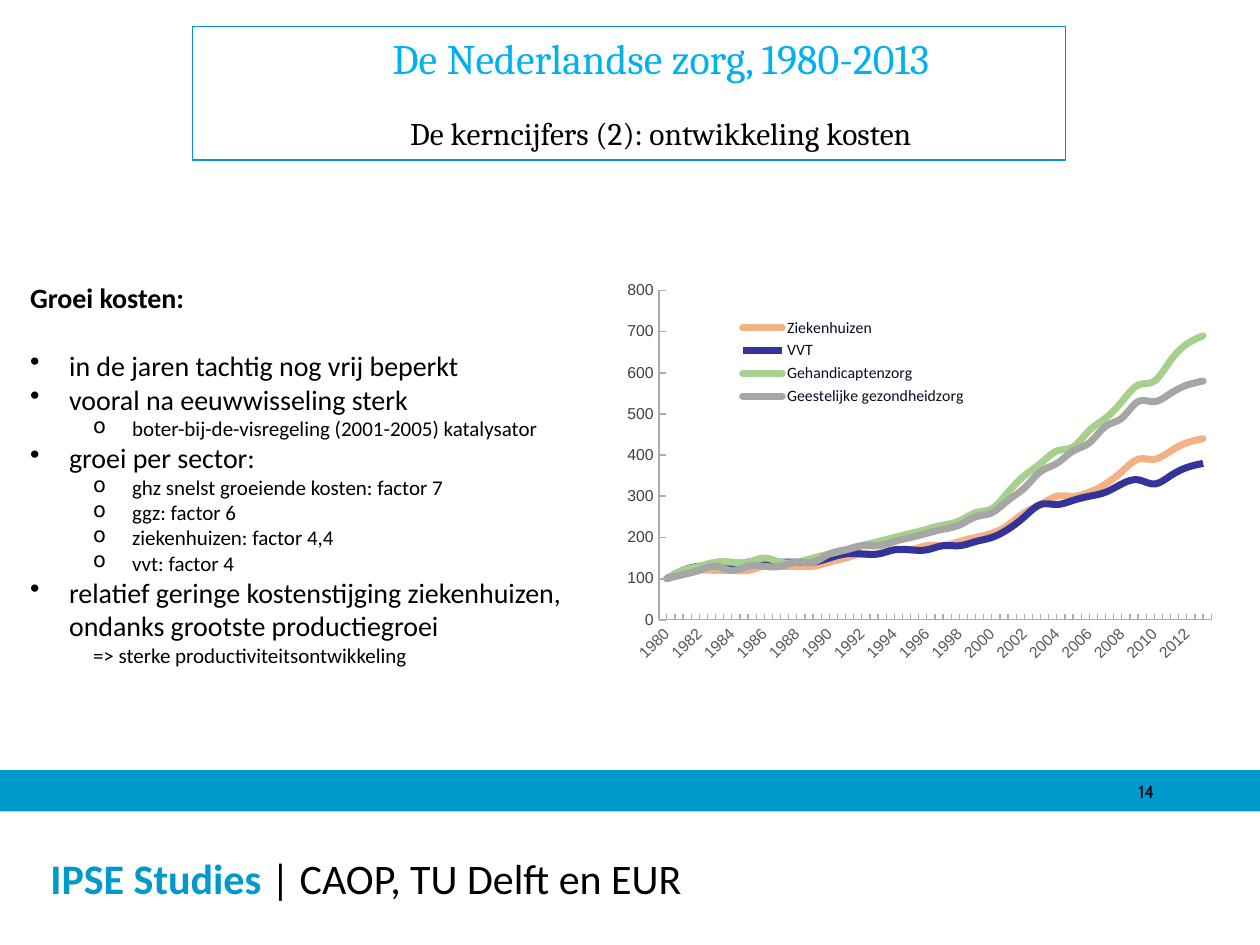
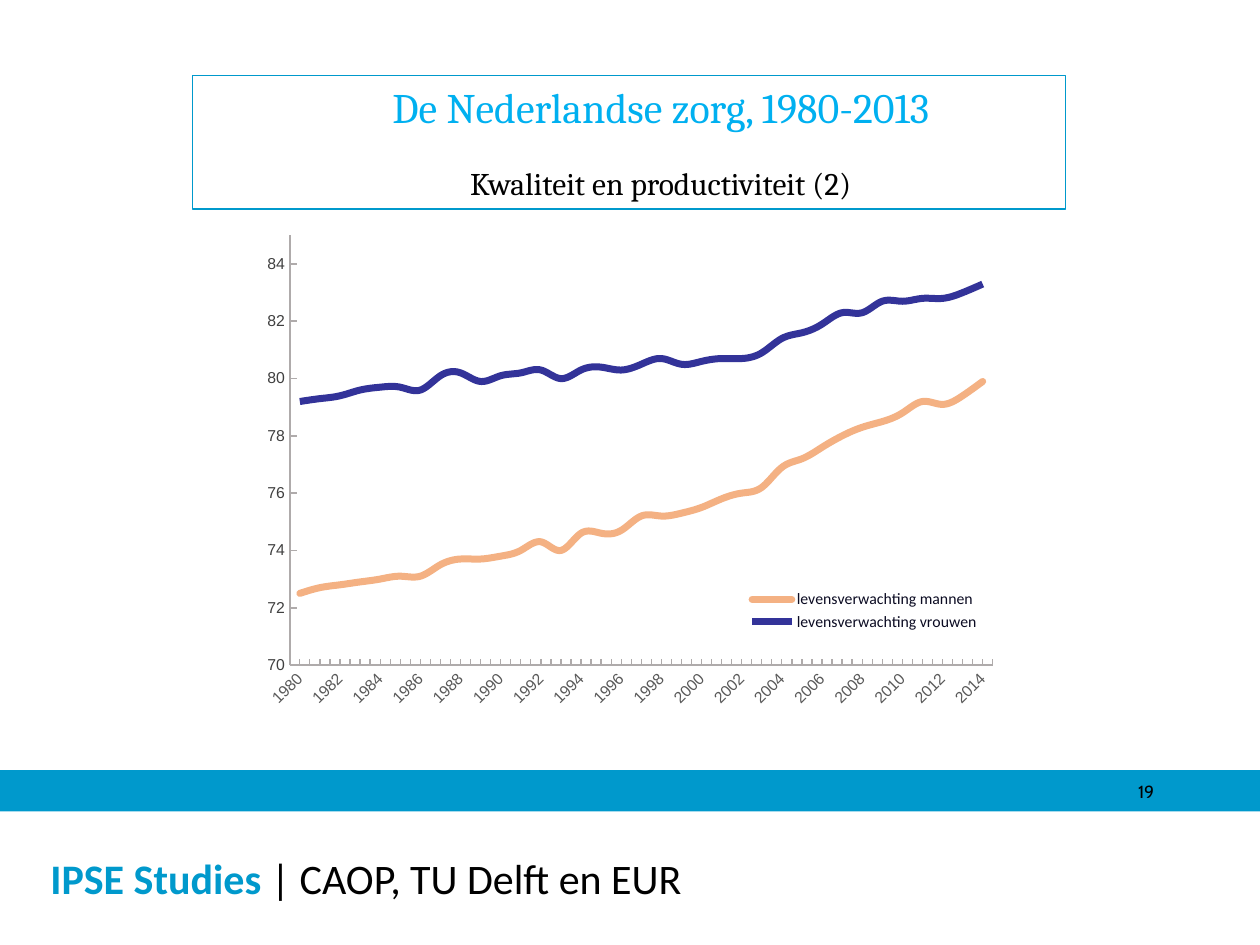
import dataclasses

import pptx
import pptx.chart.data
import pptx.dml.color
import pptx.enum.chart
import pptx.enum.shapes
import pptx.enum.text
import pptx.oxml
import pptx.oxml.ns
import pptx.util

Inches = pptx.util.Inches
Pt = pptx.util.Pt
RGB = pptx.dml.color.RGBColor.from_string
ALIGN = pptx.enum.text.PP_ALIGN
ANCHOR = pptx.enum.text.MSO_ANCHOR
TICK = pptx.enum.chart.XL_TICK_MARK


@dataclasses.dataclass(frozen=True)
class Theme:
    white: str = "FFFFFF"
    black: str = "000000"
    band: str = "0099CC"
    title: str = "00B0F0"
    axis_line: str = "AFABAB"
    year_label: str = "595959"
    value_label: str = "404040"
    legend: str = "0B0B22"
    series: tuple = ("F4B183", "333399", "A8D08D", "A6A6A6")
    heading_font: str = "Cambria"
    body_font: str = "Calibri"
    number_font: str = "Cabin"
    axis_font: str = "Arial"
    title_size: int = 24
    subtitle_size: int = 18
    body_size: int = 16
    detail_size: int = 12
    number_size: int = 10
    label_size: int = 9
    line_width: float = 0.75
    series_width: int = 4


def assign(obj, values):
    for name, value in values.items():
        setattr(obj, name, value)


def set_font(font, name, size, color, bold=False):
    assign(font, {"name": name, "size": Pt(size), "bold": bold})
    font.color.rgb = RGB(color)


def chart_element(tag, children=""):
    return pptx.oxml.parse_xml(
        f'<c:{tag} {pptx.oxml.ns.nsdecls("c")}>{children}</c:{tag}>')


def manual_layout(box, inner=False):
    target = '<c:layoutTarget val="inner"/>' if inner else ""
    modes = '<c:xMode val="edge"/><c:yMode val="edge"/>'
    sides = "".join(f'<c:{side} val="{value}"/>' for side, value in zip("xywh", box))
    return chart_element("layout", f"<c:manualLayout>{target}{modes}{sides}</c:manualLayout>")


class Deck:
    def __init__(self, prs, theme):
        self.prs = prs
        self.theme = theme
        self.slide = None

    def start_slide(self, number, title_top, subtitle):
        self.slide = self.prs.slides.add_slide(self.prs.slide_layouts[6])
        self.footer(number)
        self.title(title_top, subtitle)

    def rect(self, box, fill=None, line=None):
        kind = pptx.enum.shapes.MSO_SHAPE.RECTANGLE
        sp = self.slide.shapes.add_shape(kind, *map(Inches, box))
        sp.shadow.inherit = False
        for part, color in ((sp.fill, fill), (sp.line.fill, line)):
            if color:
                part.solid()
                part.fore_color.rgb = RGB(color)
            else:
                part.background()
        if line:
            sp.line.width = Pt(self.theme.line_width)
        return sp

    def text_box(self, box):
        tf = self.slide.shapes.add_textbox(*map(Inches, box)).text_frame
        tf.word_wrap = True
        return tf

    def paragraph(self, tf, runs, first=False, left=0, hanging=0, bullet=None, **fmt):
        p = tf.paragraphs[0] if first else tf.add_paragraph()
        pPr = p._p.get_or_add_pPr()
        pPr.set("marL", str(Inches(left)))
        pPr.set("indent", str(-Inches(hanging)))
        if bullet:
            pPr.append(pptx.oxml.parse_xml(
                f'<a:buChar {pptx.oxml.ns.nsdecls("a")} char="{bullet}"/>'))
        assign(p, {"alignment": ALIGN.LEFT, **fmt})
        for text, *style in runs:
            r = p.add_run()
            r.text = text
            set_font(r.font, *style)

    def footer(self, number):
        t = self.theme
        self.rect((0, 6.12, 10, 0.32), t.band, t.band)
        tf = self.rect((0, 6.44, 10, 1.06), t.white).text_frame
        assign(tf, {"margin_left": Inches(0.4), "vertical_anchor": ANCHOR.MIDDLE})
        self.paragraph(tf, [
            ("IPSE Studies ", t.body_font, t.title_size, t.band, True),
            ("| CAOP, TU Delft en EUR", t.body_font, t.title_size, t.black),
        ], first=True)
        tf = self.text_box((7.08, 6.15, 2.08, 0.25))
        assign(tf, {"margin_left": 0, "margin_right": 0})
        self.paragraph(tf, [(str(number), t.number_font, t.number_size, t.black)],
                       first=True, alignment=ALIGN.RIGHT)

    def title(self, top, subtitle):
        t = self.theme
        tf = self.rect((1.53, top, 6.93, 1.06), line=t.band).text_frame
        tf.vertical_anchor = ANCHOR.TOP
        lines = (("De Nederlandse zorg, 1980-2013", t.title_size, t.title),
                 (subtitle, t.subtitle_size, t.black))
        for i, (text, size, color) in enumerate(lines):
            self.paragraph(tf, [(text, t.heading_font, size, color)], first=i == 0,
                           left=0.5, alignment=ALIGN.CENTER, space_after=Pt(18))

    def bullets(self, box, heading, items):
        t = self.theme
        tf = self.text_box(box)
        self.paragraph(tf, [(heading, t.body_font, t.body_size, t.black, True)],
                       first=True, space_after=Pt(19.5))
        levels = {
            "point": (t.body_size, {"left": 0.31, "hanging": 0.31, "bullet": "•"}),
            "detail": (t.detail_size,
                       {"left": 0.81, "hanging": 0.31, "bullet": "o", "level": 1}),
            "result": (t.detail_size, {"left": 0.5, "level": 1}),
        }
        for level, text in items:
            size, fmt = levels[level]
            self.paragraph(tf, [(text, t.body_font, size, t.black)], **fmt)

    def line_chart(self, box, first_year, series, plot_box, legend_box, scale):
        t = self.theme
        data = pptx.chart.data.CategoryChartData()
        count = len(next(iter(series.values())))
        data.categories = [str(first_year + i) for i in range(count)]
        for name, values in series.items():
            data.add_series(name, values)
        kind = pptx.enum.chart.XL_CHART_TYPE.LINE
        chart = self.slide.shapes.add_chart(kind, *map(Inches, box), data).chart
        assign(chart, {"has_title": False, "has_legend": True})
        set_font(chart.font, t.number_font, t.number_size, t.black)
        chart.plots[0].vary_by_categories = False

        for line, color in zip(chart.plots[0].series, t.series):
            line.smooth = True
            line.format.line.width = Pt(t.series_width)
            line.format.line.color.rgb = RGB(color)
        for ln, color in zip(chart.element.xpath(".//c:ser/c:spPr/a:ln"), t.series):
            ln.set("cap", "flat" if color == t.series[1] else "rnd")

        axes = (
            (chart.category_axis, t.year_label, t.line_width,
             {"major_tick_mark": TICK.NONE, "minor_tick_mark": TICK.INSIDE}),
            (chart.value_axis, t.value_label, 1,
             {"major_tick_mark": TICK.INSIDE, "minor_tick_mark": TICK.NONE, **scale}),
        )
        for axis, color, width, fmt in axes:
            assign(axis, {"has_major_gridlines": False, **fmt})
            set_font(axis.tick_labels.font, t.axis_font, t.label_size, color)
            axis.format.line.width = Pt(width)
            axis.format.line.color.rgb = RGB(t.axis_line)
        chart.value_axis.tick_labels.number_format = "0"
        chart.value_axis.tick_labels.number_format_is_linked = False
        chart.element.xpath(".//c:catAx/c:txPr/a:bodyPr")[0].set("rot", "-2700000")
        skip = chart_element("tickLblSkip")
        skip.set("val", "2")
        chart.element.xpath(".//c:catAx/c:noMultiLvlLbl")[0].addprevious(skip)

        assign(chart.legend, {"position": pptx.enum.chart.XL_LEGEND_POSITION.RIGHT,
                              "include_in_layout": False})
        set_font(chart.legend.font, t.body_font, t.label_size, t.legend)
        for old in chart.element.xpath(".//c:plotArea/c:layout | .//c:legend/c:layout"):
            old.getparent().remove(old)
        plot_area = chart.element.xpath(".//c:plotArea")[0]
        plot_area.insert(0, manual_layout(plot_box, inner=True))
        legend_position = chart.element.xpath(".//c:legend/c:legendPos")[0]
        legend_position.addnext(manual_layout(legend_box))
        chart.legend.include_in_layout = True


COST_INDEX = {
    "Ziekenhuizen": [
        100, 110, 120, 120, 120, 120, 130, 130, 130, 130, 140, 150, 160, 160, 170, 170, 180,
        180, 190, 200, 210, 230, 260, 280, 300, 300, 310, 330, 360, 390, 390, 410, 430, 440],
    "VVT": [
        100, 120, 130, 130, 130, 140, 140, 140, 140, 140, 150, 160, 160, 160, 170, 170, 170,
        180, 180, 190, 200, 220, 250, 280, 280, 290, 300, 310, 330, 340, 330, 350, 370, 380],
    "Gehandicaptenzorg": [
        100, 120, 130, 140, 140, 140, 150, 140, 140, 150, 160, 170, 180, 190, 200, 210, 220,
        230, 240, 260, 270, 310, 350, 380, 410, 420, 460, 490, 530, 570, 580, 630, 670, 690],
    "Geestelijke gezondheidzorg": [
        100, 110, 120, 130, 120, 130, 130, 130, 140, 140, 160, 170, 180, 180, 190, 200, 210,
        220, 230, 250, 260, 290, 320, 360, 380, 410, 430, 470, 490, 530, 530, 550, 570, 580],
}

LIFE_EXPECTANCY = {
    "levensverwachting mannen": [
        72.5, 72.7, 72.8, 72.9, 73, 73.1, 73.1, 73.5, 73.7, 73.7, 73.8, 74, 74.3, 74, 74.6,
        74.6, 74.7, 75.2, 75.2, 75.3, 75.5, 75.8, 76, 76.2, 76.9, 77.2, 77.6, 78, 78.3, 78.5,
        78.8, 79.2, 79.1, 79.4, 79.9],
    "levensverwachting vrouwen": [
        79.2, 79.3, 79.4, 79.6, 79.7, 79.7, 79.6, 80.1, 80.2, 79.9, 80.1, 80.2, 80.3, 80, 80.3,
        80.4, 80.3, 80.5, 80.7, 80.5, 80.6, 80.7, 80.7, 80.9, 81.4, 81.6, 81.9, 82.3, 82.3,
        82.7, 82.7, 82.8, 82.8, 83, 83.3],
}

COST_POINTS = [
    ("point", "in de jaren tachtig nog vrij beperkt"),
    ("point", "vooral na eeuwwisseling sterk"),
    ("detail", "boter-bij-de-visregeling (2001-2005) katalysator"),
    ("point", "groei per sector:"),
    ("detail", "ghz snelst groeiende kosten: factor 7"),
    ("detail", "ggz: factor 6"),
    ("detail", "ziekenhuizen: factor 4,4"),
    ("detail", "vvt: factor 4"),
    ("point", "relatief geringe kostenstijging ziekenhuizen, ondanks grootste productiegroei"),
    ("result", "=> sterke productiviteitsontwikkeling"),
]


def main():
    prs = pptx.Presentation()
    assign(prs, {"slide_width": Inches(10), "slide_height": Inches(7.5)})
    deck = Deck(prs, Theme())

    deck.start_slide(14, 0.21, "De kerncijfers (2): ontwikkeling kosten")
    deck.line_chart((4.89, 2.18, 4.82, 3.15), 1980, COST_INDEX,
                    plot_box=(0.07, 0.04, 0.91, 0.83), legend_box=(0.19, 0.1, 0.4, 0.24),
                    scale={"minimum_scale": 0, "maximum_scale": 800, "major_unit": 100})
    deck.bullets((0.14, 2.18, 4.72, 3.26), "Groei kosten:", COST_POINTS)

    deck.start_slide(19, 0.6, "Kwaliteit en productiviteit (2)")
    deck.line_chart((2, 1.79, 6, 3.92), 1980, LIFE_EXPECTANCY,
                    plot_box=(0.05, 0.02, 0.93, 0.87), legend_box=(0.65, 0.73, 0.32, 0.1),
                    scale={"minimum_scale": 70, "maximum_scale": 85, "major_unit": 2})
    prs.save("out.pptx")


if __name__ == "__main__":
    main()
